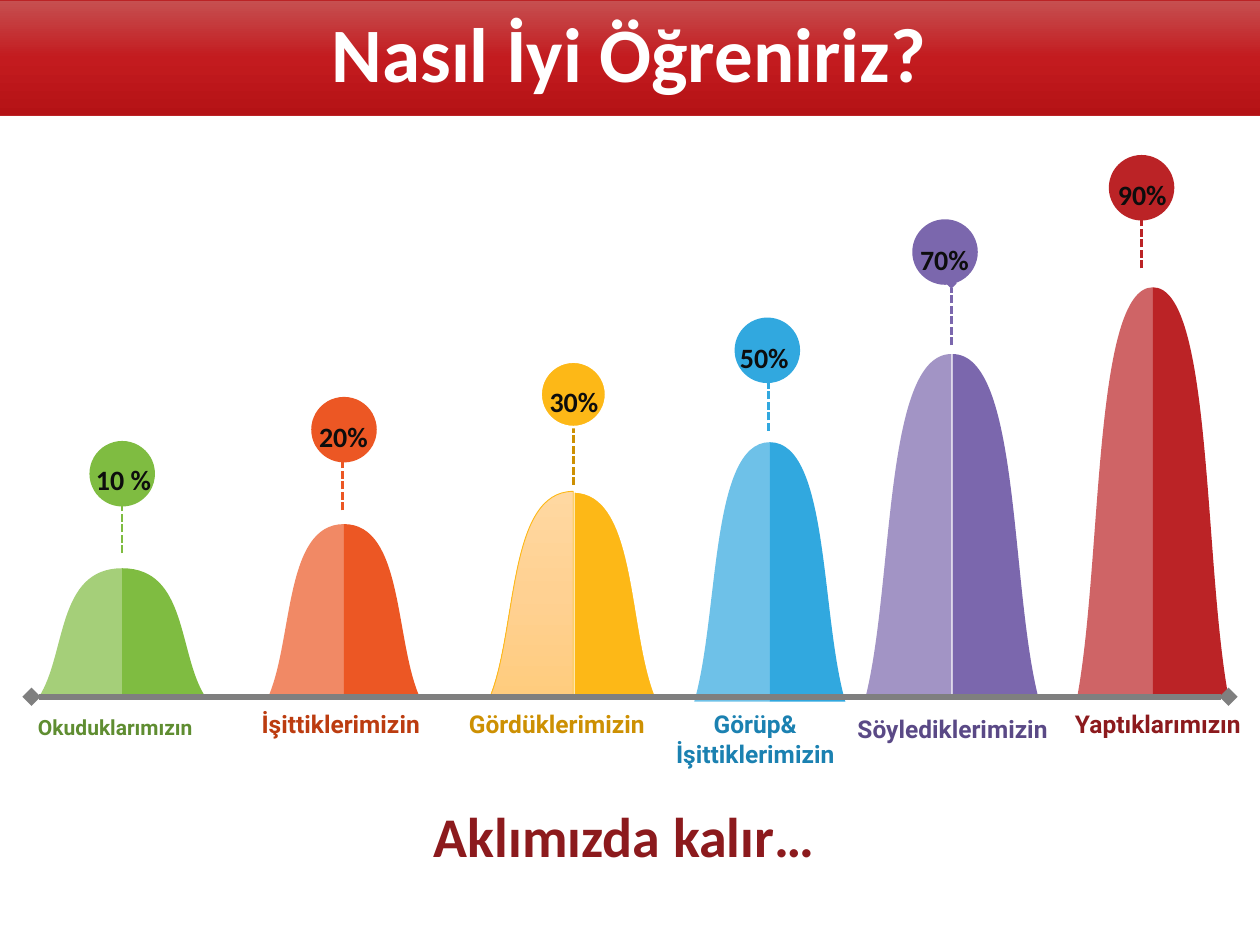
from dataclasses import dataclass
from lxml.etree import SubElement as Sub
from pptx import Presentation
from pptx.dml.color import RGBColor as Rgb
from pptx.enum.dml import MSO_LINE as Dash
from pptx.enum.shapes import MSO_CONNECTOR as Link, MSO_SHAPE as Kind
from pptx.enum.text import MSO_ANCHOR as Anchor, MSO_AUTO_SIZE as Fit
from pptx.enum.text import PP_ALIGN as Align
from pptx.oxml.ns import qn
from pptx.util import Inches, Pt

COLORS = {
    "green": "7FBC41", "orange": "EC5724", "yellow": "FDB817",
    "blue": "31A8DF", "purple": "7B67AD", "red": "BB2326",
    "moss": "5F8D31", "rust": "BC3C10", "gold": "CD9002",
    "sea": "1B81B1", "plum": "5A4986", "wine": "8C1A1D",
    "white": "FFFFFF", "ink": "0D0D0D", "gray": "7F7F7F",
}
SAND = ("FFD8A1", "FFD192", "FFCC7E")
BANNER = ("C65051", "C31B1F", "B41215")
BASE, BALL, STEM = 5.53, 0.52, 0.49


@dataclass
class Hill:
    color: str
    dark: str
    mid: float       # centre line of the hill
    half: float      # width of one half
    top: float
    ball: tuple      # left and top of the ball
    stem: tuple      # x and lower end of the stem
    share: str
    spot: tuple      # left, top and width of the share
    lines: tuple
    label: tuple     # left, top, width and height of the label
    size: int = 14
    base: float = BASE
    gap: float = 0
    wrap: bool = False


HILLS = [
    Hill("green", "moss", 0.97, 0.66, 4.51, (0.71, 3.5), (0.97, 4.39),
         "10 %", (0.66, 3.62, 0.64), ("Okuduklarımızın",),
         (-0.11, 5.62, 2.05, 0.3), size=12, wrap=True),
    Hill("orange", "rust", 2.73, 0.6, 4.16, (2.47, 3.15), (2.72, 4.05),
         "20%", (2.43, 3.28, 0.59), ("İşittiklerimizin",),
         (1.92, 5.58, 1.57, 0.34)),
    Hill("yellow", "gold", 4.55, 0.66, 3.9, (4.29, 2.87), (4.55, 3.85),
         "30%", (4.26, 3, 0.59), ("Gördüklerimizin",),
         (3.57, 5.58, 1.7, 0.34)),
    Hill("blue", "sea", 6.11, 0.6, 3.51, (5.83, 2.52), (6.1, 3.42),
         "50%", (5.77, 2.65, 0.59), ("Görüp&", "İşittiklerimizin"),
         (5.21, 5.58, 1.57, 0.57), base=5.57),
    Hill("purple", "plum", 7.55, 0.68, 2.81, (7.24, 1.74), (7.55, 2.74),
         "70%", (7.2, 1.88, 0.59), ("Söylediklerimizin",),
         (6.65, 5.62, 1.82, 0.34), gap=0.01),
    Hill("red", "wine", 9.15, 0.6, 2.28, (8.8, 1.23), (9.06, 2.13),
         "90%", (8.77, 1.36, 0.59), ("Yaptıklarımızın",),
         (8.38, 5.58, 1.62, 0.34)),
]


def tint(name: str) -> Rgb:
    return Rgb.from_string(COLORS[name])


def paint(shape, fill: str, edge: str = "", width: float = 0) -> None:
    shape.shadow.inherit = False
    shape.fill.solid()
    shape.fill.fore_color.rgb = tint(fill)
    if edge:
        shape.line.color.rgb = tint(edge)
        shape.line.width = Pt(width)
    else:
        shape.line.fill.background()


def blend(shape, stops: tuple) -> None:
    """Fill from top to bottom with evenly spaced colours."""
    shape.fill.gradient()
    shape.fill.gradient_angle = 270
    group = shape.element.spPr.find(".//" + qn("a:gsLst"))
    for old in list(group):
        group.remove(old)
    for i, code in enumerate(stops):
        stop = Sub(group, qn("a:gs"), pos=str(100000 * i // (len(stops) - 1)))
        Sub(stop, qn("a:srgbClr"), val=code)


def fade(shape, cover: int) -> None:
    code = shape.element.spPr.find(qn("a:solidFill") + "/" + qn("a:srgbClr"))
    Sub(code, qn("a:alpha"), val=str(cover * 1000))


def write(frame, lines: tuple, font: str, size: int, color: str) -> None:
    for i, line in enumerate(lines):
        para = frame.paragraphs[0] if i == 0 else frame.add_paragraph()
        para.alignment = Align.CENTER
        run = para.add_run()
        run.text = line
        run.font.name, run.font.size, run.font.bold = font, Pt(size), True
        run.font.color.rgb = tint(color)


def text(shapes, place: tuple, lines: tuple, font: str, size: int,
         color: str, wrap: bool = False) -> None:
    frame = shapes.add_textbox(*map(Inches, place)).text_frame
    frame.word_wrap, frame.auto_size = wrap, Fit.SHAPE_TO_FIT_TEXT
    write(frame, lines, font, size, color)


def rule(shapes, start: tuple, end: tuple, color: str, width: float,
         ends: tuple, dash=None) -> None:
    line = shapes.add_connector(Link.STRAIGHT, *map(Inches, start + end))
    line.line.color.rgb = tint(color)
    line.line.width = Pt(width)
    if dash:
        line.line.dash_style = dash
    props = line.element.spPr
    for tag in ends:
        Sub(props.find(qn("a:ln")), qn(tag), type="diamond")
    Sub(props, qn("a:effectLst"))


def slope(shapes, hill: Hill, side: int):
    """Draw one half of a hill: side is -1 for left, 1 for right."""
    mid = hill.mid + (hill.gap if side > 0 else 0)
    reach, high = side * hill.half, hill.base - hill.top
    points = [
        (mid, hill.top), (mid, hill.base), (mid + reach, hill.base),
        (mid + 0.67 * reach, hill.top + 0.67 * high),
        (mid + 0.79 * reach, hill.top), (mid, hill.top),
    ]
    spots = [(Inches(x), Inches(y)) for x, y in points]
    pen = shapes.build_freeform(*spots[0])
    pen.add_line_segments(spots[1:], close=True)
    shape = pen.convert_to_shape()
    # Turn the last three points into one curve
    tail = list(shape.element.iter(qn("a:lnTo")))[-3:]
    curve = Sub(tail[0].getparent(), qn("a:cubicBezTo"))
    tail[0].addprevious(curve)
    for step in tail:
        curve.append(step[0])
        step.getparent().remove(step)
    return shape


def stem(shapes, hill: Hill, color: str) -> None:
    x, low = hill.stem
    rule(shapes, (x, low), (x, low - STEM), color, 1.5, ("a:tailEnd",),
         Dash.SQUARE_DOT)


def main() -> None:
    deck = Presentation()
    deck.slide_width, deck.slide_height = Inches(10), Inches(7.5)
    shapes = deck.slides.add_slide(deck.slide_layouts[6]).shapes

    # Balls, the yellow one in front of its stem
    for hill in HILLS:
        yellow = hill.color == "yellow"
        if yellow:
            stem(shapes, hill, hill.dark)
        ball = shapes.add_shape(Kind.OVAL, *map(Inches, hill.ball),
                                Inches(BALL), Inches(BALL))
        paint(ball, hill.color, "white" if yellow else "", 1.5)

    # Hills and their labels
    for hill in HILLS:
        yellow = hill.color == "yellow"
        right = slope(shapes, hill, 1)
        paint(right, hill.color, "white" if yellow else "", 1.5)
        left = slope(shapes, hill, -1)
        paint(left, hill.color, hill.color if yellow else "", 0.5)
        if yellow:
            blend(left, SAND)
        else:
            fade(left, 70)
        text(shapes, hill.label, hill.lines, "Roboto", hill.size, hill.dark,
             hill.wrap)

    # Ground line
    rule(shapes, (0.25, BASE), (9.75, BASE), "gray", 3.5,
         ("a:headEnd", "a:tailEnd"))

    # Stems and shares
    for hill in HILLS:
        if hill.color != "yellow":
            stem(shapes, hill, hill.color)
        text(shapes, hill.spot + (0.37,), (hill.share,), "Calibri", 16, "ink")

    # Title banner
    title = shapes.add_shape(Kind.RECTANGLE, Inches(-0.01), Inches(0),
                             Inches(10.01), Inches(0.92))
    paint(title, "red", "red", 0.5)
    blend(title, BANNER)
    frame = title.text_frame
    frame.word_wrap, frame.vertical_anchor = True, Anchor.MIDDLE
    write(frame, ("Nasıl İyi Öğreniriz?",), "Calibri", 44, "white")
    frame.paragraphs[0].line_spacing = 0.9

    # Closing line
    text(shapes, (2.3, 6.31, 5.31, 0.64), ("Aklımızda kalır…",),
         "Calibri", 32, "wine", wrap=True)

    deck.save("out.pptx")


if __name__ == "__main__":
    main()
